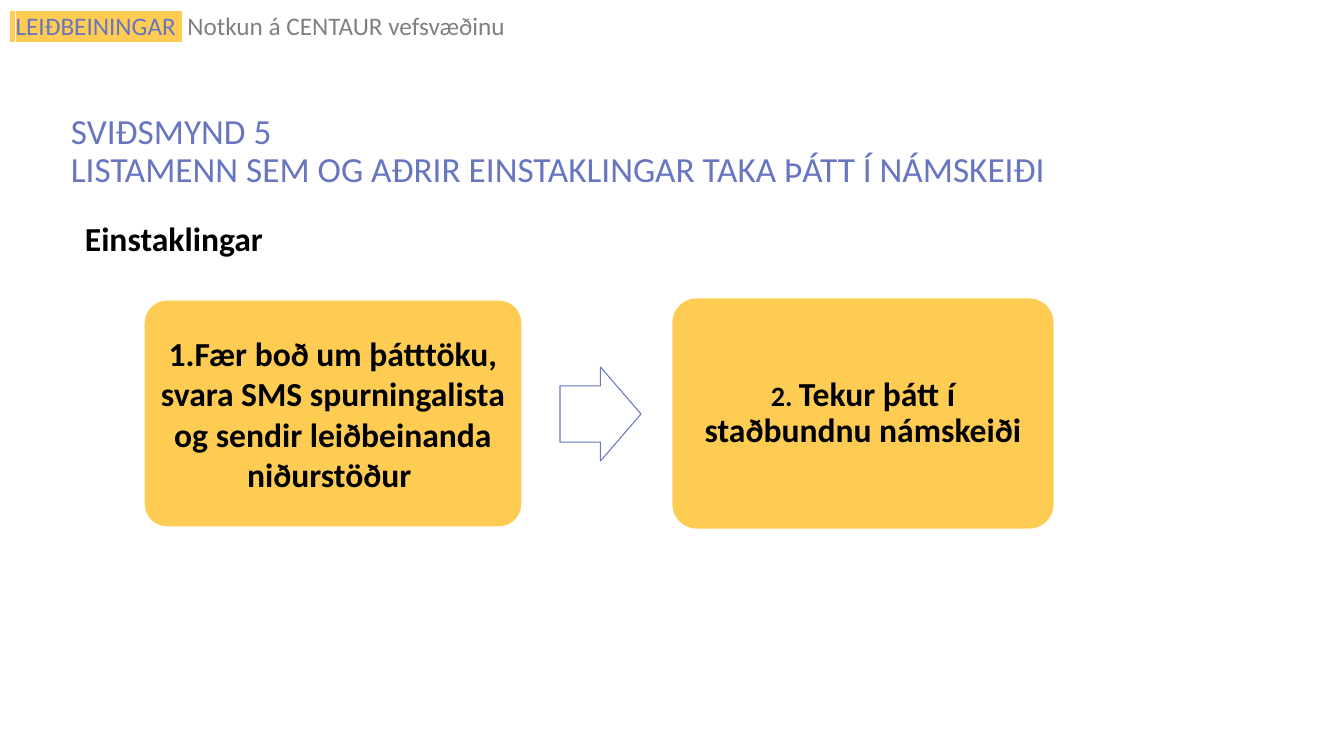
from lxml import etree
from pptx import Presentation
from pptx.dml.color import RGBColor
from pptx.enum.shapes import MSO_SHAPE
from pptx.enum.text import MSO_ANCHOR, PP_ALIGN
from pptx.oxml.ns import qn
from pptx.util import Emu, Pt

ROUND, ARROW = MSO_SHAPE.ROUNDED_RECTANGLE, MSO_SHAPE.RIGHT_ARROW
TOP, MIDDLE = MSO_ANCHOR.TOP, MSO_ANCHOR.MIDDLE
LEFT, CENTER = PP_ALIGN.LEFT, PP_ALIGN.CENTER
GOLD, BLUE, GRAY, BLACK, WHITE = "FFCC53", "6875C1", "808080", "000000", "FFFFFF"


def px(n):
    return Emu(round(n * 914400 / 100.8))


def color(code):
    return RGBColor.from_string(code)


class Deck:
    """Holds the style and the current slide."""

    font = "Calibri"

    def __init__(self):
        self.file = Presentation()
        self.file.slide_width, self.file.slide_height = px(1344), px(756)
        self.slide = self.file.slides.add_slide(self.file.slide_layouts[6])

    def run(self, para, text, size, code, bold=False, mark=None):
        run = para.add_run()
        run.text = text
        font = run.font
        font.size, font.bold, font.name = Pt(size), bold, self.font
        font.color.rgb = color(code)
        if mark:
            light = etree.Element(qn("a:highlight"))
            etree.SubElement(light, qn("a:srgbClr"), val=mark)
            run._r.rPr.find(qn("a:solidFill")).addnext(light)

    def fill(self, frame, runs, anchor=TOP, align=LEFT, lead=1.0):
        frame.word_wrap, frame.vertical_anchor = True, anchor
        para = frame.paragraphs[0]
        para.alignment, para.line_spacing = align, lead
        for item in runs:
            if item == "\n":
                para.add_line_break()
            else:
                self.run(para, *item)

    def text(self, box, runs, **style):
        shape = self.slide.shapes.add_textbox(*map(px, box))
        self.fill(shape.text_frame, runs, **style)

    def shape(self, kind, box, adjust, line, width, fill=None):
        shape = self.slide.shapes.add_shape(kind, *map(px, box))
        shape.shadow.inherit = False
        for i, value in enumerate(adjust):
            shape.adjustments[i] = value
        if fill:
            shape.fill.solid()
            shape.fill.fore_color.rgb = color(fill)
        else:
            shape.fill.background()
        shape.line.color.rgb, shape.line.width = color(line), Pt(width)
        return shape

    def card(self, left, line, width, inset, runs, lead):
        shape = self.shape(ROUND, (left, 300, 378, 227), [0.1], line, width, GOLD)
        frame = shape.text_frame
        frame.margin_left = frame.margin_right = px(inset)
        frame.margin_top = frame.margin_bottom = px(inset)
        self.fill(frame, runs, MIDDLE, CENTER, lead)


def main():
    deck = Deck()
    deck.text((0, 11, 960, 35), [
        (" ", 18, WHITE, False, GOLD),
        ("LEIÐBEININGAR", 18, BLUE, False, GOLD),
        (" ", 18, GRAY, False, GOLD),
        (" Notkun á CENTAUR vefsvæðinu", 18, GRAY),
    ], lead=0.8)
    deck.text((61, 119, 1220, 67), [
        ("SVIÐSMYND 5 ", 25.2, BLUE),
        "\n",
        ("LISTAMENN SEM OG AÐRIR EINSTAKLINGAR TAKA ÞÁTT Í NÁMSKEIÐI", 25.2, BLUE),
    ], anchor=MIDDLE, lead=0.9)
    deck.text((75, 213, 674, 50), [("Einstaklingar", 24, BLACK, True)])
    deck.card(144, WHITE, 1, 10, [
        ("1.Fær boð um þátttöku, svara SMS spurningalista og sendir "
         "leiðbeinanda niðurstöður ", 24, BLACK, True),
    ], 1.0)
    deck.shape(ARROW, (560, 367, 81, 94), [0.6, 0.5], BLUE, 0.75)
    deck.card(674, GOLD, 2.25, 8, [
        ("2. ", 20, BLACK, True),
        ("Tekur þátt í staðbundnu námskeiði", 24, BLACK, True),
    ], 0.9)
    deck.file.save("out.pptx")


if __name__ == "__main__":
    main()
